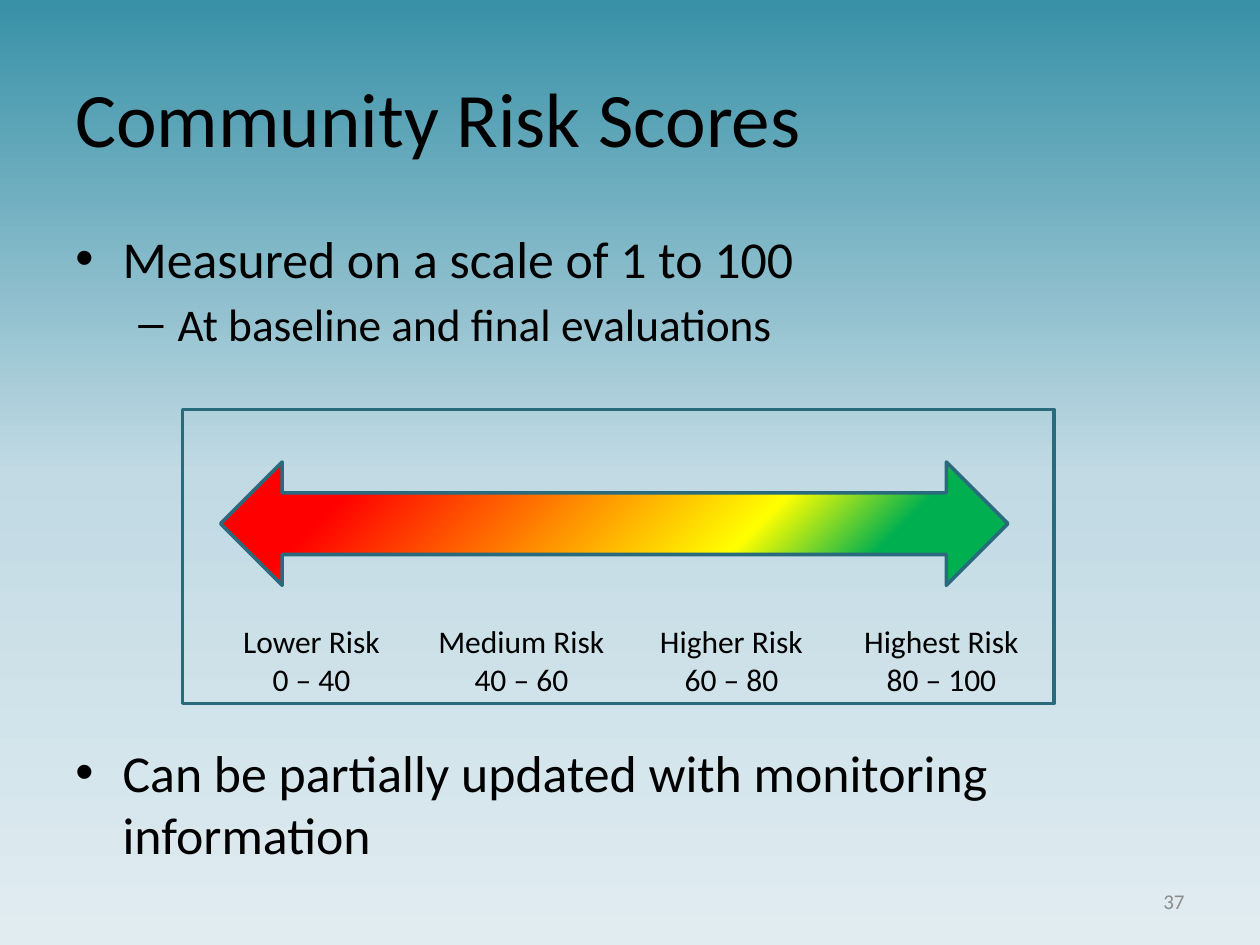
"""Build the Community Risk Scores slide."""
import dataclasses
import typing

import pptx
import pptx.dml.color
import pptx.enum.shapes
import pptx.enum.text
import pptx.oxml
import pptx.oxml.ns
import pptx.slide
import pptx.util

Pt = pptx.util.Pt
Shape = pptx.enum.shapes.MSO_SHAPE
Align = pptx.enum.text.PP_ALIGN
Anchor = pptx.enum.text.MSO_ANCHOR
qn = pptx.oxml.ns.qn
NS = pptx.oxml.ns.nsdecls("a")
Stops = tuple[tuple[int, str], ...]


@dataclasses.dataclass(frozen=True)
class Theme:
    font: str = "Calibri"
    ink: str = "000000"
    muted: str = "8C8C8C"
    edge: str = "296B7C"
    title: float = 44
    point: float = 29.6
    detail: float = 25.9
    label: float = 18
    number: float = 12
    sky: Stops = ((0, "3891A7"), (50, "C1DAE4"), (100, "E1ECF1"))
    scale: Stops = ((17, "FF0000"), (66, "FFFF00"), (82, "00B050"))


class Box(typing.NamedTuple):
    left: float
    top: float
    width: float
    height: float


class Bullet(typing.NamedTuple):
    text: str
    mark: str
    size: float
    left: float
    hang: float
    before: float


class Band(typing.NamedTuple):
    name: str
    span: str


THEME = Theme()
BULLETS = (
    Bullet("Measured on a scale of 1 to 100", "•", THEME.point, 27, 27, 2),
    Bullet("At baseline and final evaluations", "–", THEME.detail, 58.5, 22.5, 4),
    Bullet("Can be partially updated with monitoring information",
           "•", THEME.point, 27, 27, 223),
)
BANDS = (
    Band("Lower Risk", "0 – 40"),
    Band("Medium Risk", "40 – 60"),
    Band("Higher Risk", "60 – 80"),
    Band("Highest Risk", "80 – 100"),
)
FIRST_TAB, TAB_GAP = 66.5, 120


def color(value: str) -> pptx.dml.color.RGBColor:
    return pptx.dml.color.RGBColor.from_string(value)


def blend(owner, stops: Stops, angle: int) -> None:
    """Replace the solid fill of an element with a linear gradient."""
    marks = "".join(
        f'<a:gs pos="{at * 1000}"><a:srgbClr val="{value}"/></a:gs>'
        for at, value in stops
    )
    fill = pptx.oxml.parse_xml(
        f'<a:gradFill {NS} rotWithShape="1"><a:gsLst>{marks}</a:gsLst>'
        f'<a:lin ang="{angle * 60000}" scaled="0"/></a:gradFill>'
    )
    owner.replace(owner.find(qn("a:solidFill")), fill)


def style(para, size: float, ink: str = THEME.ink) -> None:
    for run in para.runs:
        run.font.name = THEME.font
        run.font.size = Pt(size)
        run.font.color.rgb = color(ink)


def add_text(slide: pptx.slide.Slide, box: Box, anchor: Anchor):
    frame = slide.shapes.add_textbox(*map(Pt, box)).text_frame
    frame.word_wrap = True
    frame.vertical_anchor = anchor
    return frame


def add_line(slide: pptx.slide.Slide, box: Box, text: str, size: float,
             ink: str, align: Align) -> None:
    frame = add_text(slide, box, Anchor.MIDDLE)
    frame.text = text
    para = frame.paragraphs[0]
    para.alignment = align
    style(para, size, ink)


def add_list(slide: pptx.slide.Slide, box: Box,
             items: tuple[Bullet, ...]) -> None:
    frame = add_text(slide, box, Anchor.TOP)
    frame.text = "\n".join(item.text for item in items)
    for para, item in zip(frame.paragraphs, items):
        para.space_before = Pt(item.before)
        style(para, item.size)
        props = para._p.get_or_add_pPr()
        props.set("marL", str(Pt(item.left)))
        props.set("indent", str(-Pt(item.hang)))
        props.append(pptx.oxml.parse_xml(f'<a:buFont {NS} typeface="Arial"/>'))
        props.append(pptx.oxml.parse_xml(f'<a:buChar {NS} char="{item.mark}"/>'))


def add_form(slide: pptx.slide.Slide, kind: Shape, box: Box):
    form = slide.shapes.add_shape(kind, *map(Pt, box))
    form.shadow.inherit = False
    form.line.color.rgb = color(THEME.edge)
    form.line.width = Pt(2)
    return form


def add_arrow(slide: pptx.slide.Slide, box: Box) -> None:
    arrow = add_form(slide, Shape.LEFT_RIGHT_ARROW, box)
    arrow.fill.solid()
    blend(arrow._element.spPr, THEME.scale, 45)


def add_panel(slide: pptx.slide.Slide, box: Box,
              bands: tuple[Band, ...]) -> None:
    panel = add_form(slide, Shape.RECTANGLE, box)
    panel.fill.background()
    frame = panel.text_frame
    frame.word_wrap = True
    frame.vertical_anchor = Anchor.BOTTOM
    frame.text = "\n".join("\t" + "\t".join(row) for row in zip(*bands))
    tabs = "".join(
        f'<a:tab pos="{Pt(FIRST_TAB + TAB_GAP * i)}" algn="ctr"/>'
        for i in range(len(bands))
    )
    for para in frame.paragraphs:
        para.alignment = Align.LEFT
        style(para, THEME.label)
        para._p.get_or_add_pPr().append(
            pptx.oxml.parse_xml(f"<a:tabLst {NS}>{tabs}</a:tabLst>"))


def main() -> None:
    deck = pptx.Presentation()
    deck.slide_width, deck.slide_height = Pt(720), Pt(540)
    slide = deck.slides.add_slide(deck.slide_layouts[6])
    slide.background.fill.solid()
    blend(slide._element.find(".//" + qn("p:bgPr")), THEME.sky, 90)
    add_line(slide, Box(516, 500.5, 168, 28.75), "37",
             THEME.number, THEME.muted, Align.RIGHT)
    add_line(slide, Box(36, 21.6, 648, 90), "Community Risk Scores",
             THEME.title, THEME.ink, Align.LEFT)
    add_list(slide, Box(36, 126, 648, 356.4), BULLETS)
    add_arrow(slide, Box(126, 264, 450, 70.5))
    add_panel(slide, Box(104.4, 234, 498, 168), BANDS)
    deck.save("out.pptx")


if __name__ == "__main__":
    main()
